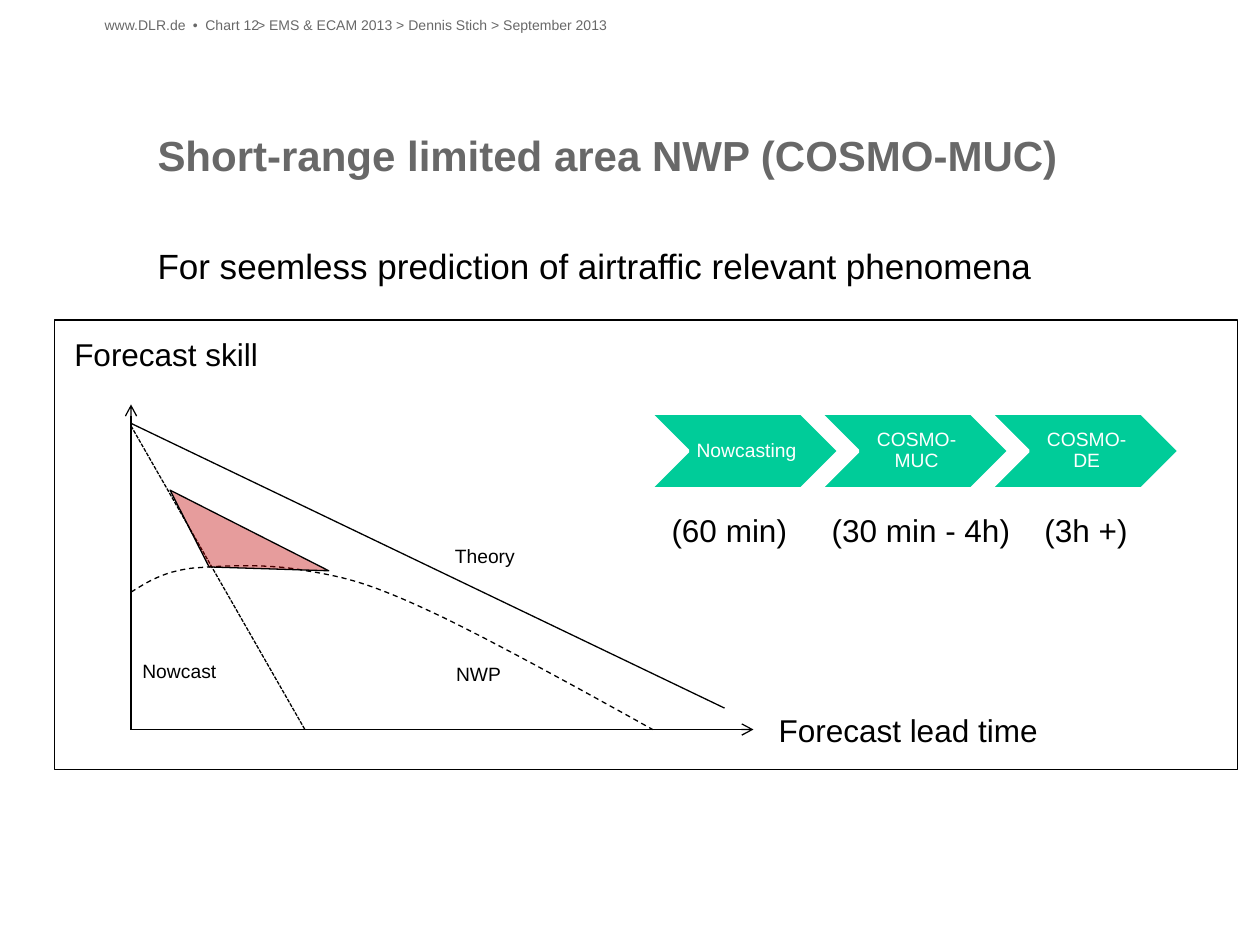
from dataclasses import dataclass
from typing import Optional

from lxml import etree
from pptx import Presentation
from pptx import util as u
from pptx.dml.color import RGBColor
from pptx.enum import dml, shapes, text
from pptx.oxml.ns import qn

GREY, BLACK, WHITE, GREEN, RED = "686868", "000000", "FFFFFF", "00CC99", "C00000"


@dataclass
class Label:
    words: str
    left: float
    top: float
    width: float
    height: float
    size: float
    color: str = BLACK
    tabs: tuple[float, ...] = ()


@dataclass
class Line:
    start: tuple[float, float]
    end: tuple[float, float]
    dash: Optional[dml.MSO_LINE] = None
    arrow: bool = False


ORIGIN = (1.04, 5.79)
LABELS = [
    Label("For seemless prediction of airtraffic relevant phenomena", 1.25, 1.94, 8.41, 0.4, 20),
    Label("> EMS & ECAM 2013 > Dennis Stich > September 2013", 2.04, 0.13, 5.64, 0.15, 8, GREY),
    Label("www.DLR.de\t•\tChart 12", 0.83, 0.13, 1.38, 0.15, 8, GREY, (0.7, 0.8)),
    Label("\t(60 min)\t(30 min - 4h)\t(3h +)", 5.13, 4.06, 4.2, 0.3, 18, BLACK, (0.2, 1.47, 3.16)),
    Label("Forecast skill", 0.59, 2.66, 2.44, 0.3, 18),
    Label("Forecast lead time", 6.18, 5.64, 2.44, 0.3, 18),
    Label("Nowcast", 1.13, 5.23, 1.7, 0.19, 11),
    Label("NWP", 3.62, 5.26, 1.7, 0.21, 11),
    Label("Theory", 3.61, 4.32, 1.7, 0.19, 11),
]
LINES = [
    Line(ORIGIN, (5.98, 5.79), arrow=True),
    Line(ORIGIN, (1.04, 3.21), arrow=True),
    Line((1.04, 3.36), (5.75, 5.62)),
    Line((1.04, 3.38), (2.42, 5.79), dml.MSO_LINE.SQUARE_DOT),
]
STAGES = ["Nowcasting", "COSMO-MUC", "COSMO-DE"]
GAIN_AREA = [(1.35, 3.89), (1.66, 4.5), (2.61, 4.53)]
# Bezier knots of the NWP skill curve: every third point lies on the curve
NWP_CURVE = [
    (1.04, 4.7), (1.17, 4.62), (1.29, 4.54), (1.52, 4.51), (1.76, 4.49),
    (2.12, 4.47), (2.43, 4.53), (2.75, 4.58), (2.96, 4.64), (3.41, 4.85),
    (3.87, 5.06), (4.91, 5.64), (5.18, 5.79),
]


def rgb(value: str) -> RGBColor:
    return RGBColor.from_string(value)


def format_frame(frame, margins=(0, 0, 0, 0), anchor=text.MSO_ANCHOR.TOP) -> None:
    sides = ("left", "top", "right", "bottom")
    values = {f"margin_{side}": u.Inches(gap) for side, gap in zip(sides, margins)}
    values |= {"auto_size": text.MSO_AUTO_SIZE.NONE, "word_wrap": True, "vertical_anchor": anchor}
    for name, value in values.items():
        setattr(frame, name, value)


def write(frame, words: str, size: float, color: str, bold: bool = False,
          align=text.PP_ALIGN.LEFT) -> None:
    para = frame.paragraphs[0]
    para.alignment = align
    span = para.add_run()
    span.text = words
    for name, value in {"name": "Arial", "size": u.Pt(size), "bold": bold}.items():
        setattr(span.font, name, value)
    span.font.color.rgb = rgb(color)


def add_label(page, label: Label) -> None:
    box = page.shapes.add_textbox(
        *map(u.Inches, (label.left, label.top, label.width, label.height)))
    format_frame(box.text_frame)
    if label.tabs:
        props = box.text_frame.paragraphs[0]._p.get_or_add_pPr()
        stops = etree.SubElement(props, qn("a:tabLst"))
        for stop in label.tabs:
            etree.SubElement(stops, qn("a:tab"), pos=str(u.Inches(stop)), algn="l")
    write(box.text_frame, label.words, label.size, label.color)


def format_line(line, color: str = BLACK, width: float = 0.75, dash=None) -> None:
    line.color.rgb = rgb(color)
    line.width = u.Pt(width)
    if dash:
        line.dash_style = dash


def add_line(page, item: Line) -> None:
    link = page.shapes.add_connector(
        shapes.MSO_CONNECTOR.STRAIGHT, *map(u.Inches, item.start + item.end))
    format_line(link.line, dash=item.dash)
    if item.arrow:
        etree.SubElement(link.line._get_or_add_ln(), qn("a:tailEnd"), type="arrow")
    etree.SubElement(link._element.spPr, qn("a:effectLst"))


def add_outline(page, points, close: bool, dash=None):
    (x, y), *rest = [(u.Inches(px), u.Inches(py)) for px, py in points]
    builder = page.shapes.build_freeform(x, y)
    builder.add_line_segments(rest, close=close)
    outline = builder.convert_to_shape()
    outline.shadow.inherit = False
    outline.fill.background()
    format_line(outline.line, dash=dash)
    return outline


def bezier_points(knots, steps: int = 16) -> list[tuple[float, float]]:
    points = [knots[0]]
    for first in range(0, len(knots) - 1, 3):
        segment = knots[first:first + 4]
        for step in range(1, steps + 1):
            t = step / steps
            weights = ((1 - t) ** 3, 3 * t * (1 - t) ** 2, 3 * t * t * (1 - t), t ** 3)
            points.append(tuple(sum(w * p[axis] for w, p in zip(weights, segment))
                                for axis in (0, 1)))
    return points


def add_stage(page, words: str, left: float) -> None:
    stage = page.shapes.add_shape(
        shapes.MSO_SHAPE.CHEVRON, *map(u.Inches, (left, 3.28, 1.5, 0.6)))
    stage.shadow.inherit = False
    stage.fill.solid()
    stage.fill.fore_color.rgb = rgb(GREEN)
    format_line(stage.line, WHITE, 2)
    format_frame(stage.text_frame, (0.05, 0.02, 0.02, 0.02), text.MSO_ANCHOR.MIDDLE)
    write(stage.text_frame, words, 11, WHITE, align=text.PP_ALIGN.CENTER)
    stage.text_frame.paragraphs[0].line_spacing = 0.9


def main() -> None:
    deck = Presentation()
    deck.slide_width, deck.slide_height = u.Inches(10), u.Inches(7.5)
    page = deck.slides.add_slide(deck.slide_layouts[5])

    # Title
    title = page.shapes.title
    for name, value in {"left": 1.25, "top": 1.03, "width": 8.03, "height": 0.81}.items():
        setattr(title, name, u.Inches(value))
    format_frame(title.text_frame)
    write(title.text_frame, "Short-range limited area NWP (COSMO-MUC)", 24, GREY, bold=True)

    # Forecast chain
    for index, words in enumerate(STAGES):
        add_stage(page, words, 5.16 + 1.35 * index)

    # Diagram border
    border = page.shapes.add_shape(
        shapes.MSO_SHAPE.RECTANGLE, *map(u.Inches, (0.43, 2.54, 9.39, 3.57)))
    border.shadow.inherit = False
    border.fill.background()
    format_line(border.line)

    # Skill diagram
    for item in LINES:
        add_line(page, item)
    add_outline(page, bezier_points(NWP_CURVE), close=False, dash=dml.MSO_LINE.DASH)
    gain = add_outline(page, GAIN_AREA, close=True)
    gain.fill.solid()
    gain.fill.fore_color.rgb = rgb(RED)
    tint = gain._element.spPr.find(qn("a:solidFill"))[0]
    etree.SubElement(tint, qn("a:alpha"), val="39000")

    # Header, body and diagram labels
    for label in LABELS:
        add_label(page, label)

    deck.save("out.pptx")


if __name__ == "__main__":
    main()
